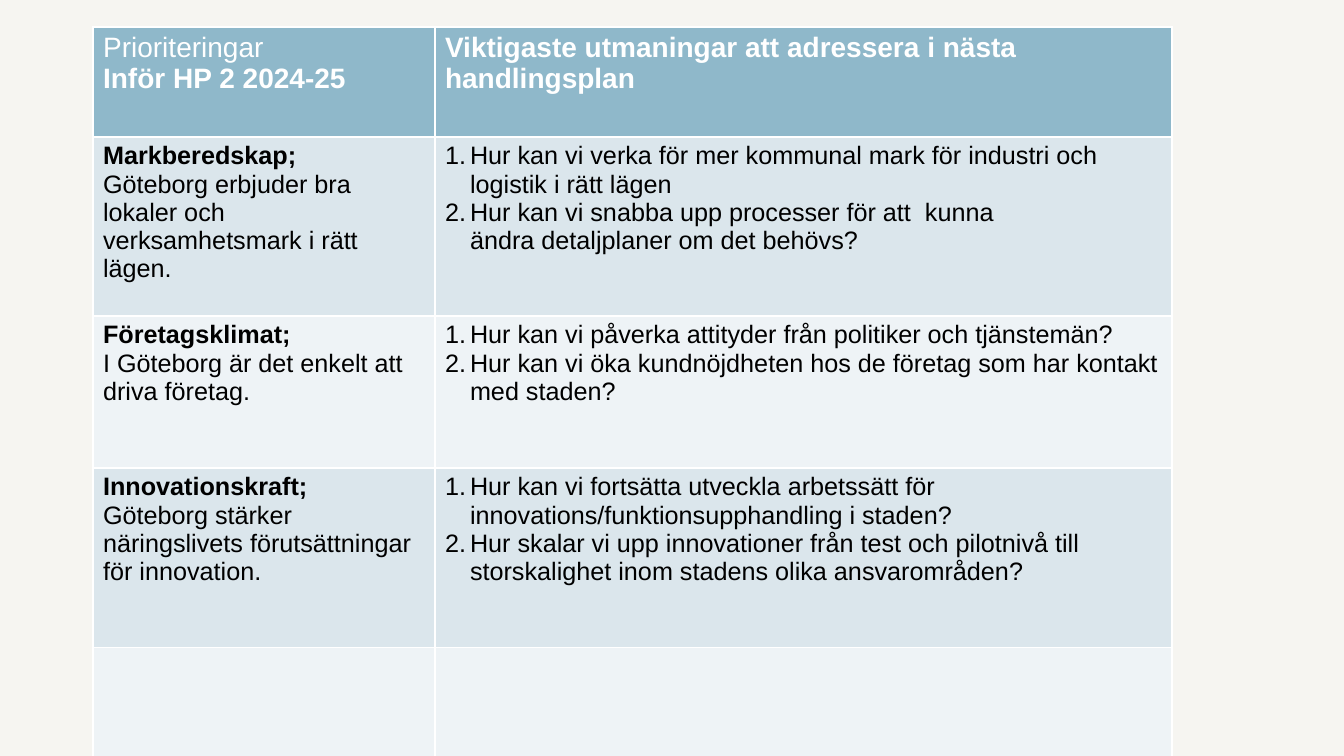
from lxml import etree
from pptx import Presentation
from pptx.dml.color import RGBColor
from pptx.oxml.ns import qn
from pptx.util import Emu, Pt

PX = 9071  # EMU per px at 100.8 px to the inch
BLANK_LAYOUT = 6
NBSP = chr(160)

FONT = "Arial"
BACKGROUND = "F6F5F1"
WHITE = "FFFFFF"
BLACK = "000000"
HEADER_FILL = "8FB8CA"
BAND_FILLS = ("DBE6EC", "EEF3F6")

TABLE_LEFT, TABLE_TOP = 93, 27
COLUMN_WIDTHS = (342, 737)
ROW_HEIGHTS = (110, 179, 152, 180, 207)
NUMBER_INDENT = 25

HEADER_LEFT = ("Prioriteringar", f"Inför HP 2 2024-25{NBSP}")
HEADER_RIGHT = f"Viktigaste utmaningar att adressera{NBSP}i nästa handlingsplan"

# Priority, its goal, and the challenges to address
PRIORITIES = (
    ("Markberedskap;",
     f"Göteborg erbjuder bra lokaler och verksamhetsmark i{NBSP}rätt lägen.",
     ("Hur kan vi verka för mer kommunal mark för industri och logistik i rätt lägen",
      f"Hur kan vi snabba upp processer för att{NBSP} kunna ändra{NBSP}detaljplaner "
      "om det behövs?")),
    ("Företagsklimat;",
     "I Göteborg är det enkelt att driva företag.",
     ("Hur kan vi påverka attityder från politiker och tjänstemän?",
      "Hur kan vi öka kundnöjdheten hos de företag som har kontakt med staden?")),
    ("Innovationskraft;",
     f"Göteborg stärker näringslivets förutsättningar för{NBSP}innovation.",
     ("Hur kan vi fortsätta utveckla arbetssätt för innovations/funktionsupphandling "
      "i staden?",
      "Hur skalar vi upp innovationer från test och pilotnivå till storskalighet inom "
      "stadens olika ansvarområden?")),
)


def px(length):
    return Emu(length * PX)


def color(hex_string):
    return RGBColor.from_string(hex_string)


def add_text(paragraph, text, size=18, bold=False, font_color=BLACK):
    run = paragraph.add_run()
    run.text = text
    run.font.name = FONT
    run.font.size = Pt(size)
    run.font.bold = bold
    run.font.color.rgb = color(font_color)


def number_paragraph(paragraph):
    properties = paragraph._p.get_or_add_pPr()
    properties.set("marL", str(px(NUMBER_INDENT)))
    properties.set("indent", str(-px(NUMBER_INDENT)))
    etree.SubElement(properties, qn("a:buAutoNum"), type="arabicPeriod")


def style_cell(cell, fill):
    """Give the cell thin white borders and a solid fill."""
    properties = cell._tc.get_or_add_tcPr()
    for side in ("L", "R", "T", "B"):
        line = etree.SubElement(properties, qn(f"a:ln{side}"), w=str(Pt(1)))
        solid = etree.SubElement(line, qn("a:solidFill"))
        etree.SubElement(solid, qn("a:srgbClr"), val=WHITE)
    cell.fill.solid()
    cell.fill.fore_color.rgb = color(fill)


def add_priority_table(slide):
    frame = slide.shapes.add_table(
        len(ROW_HEIGHTS), len(COLUMN_WIDTHS), px(TABLE_LEFT), px(TABLE_TOP),
        px(sum(COLUMN_WIDTHS)), px(sum(ROW_HEIGHTS)))
    table = frame.table
    for column, width in zip(table.columns, COLUMN_WIDTHS):
        column.width = px(width)
    for index, (row, height) in enumerate(zip(table.rows, ROW_HEIGHTS)):
        row.height = px(height)
        fill = HEADER_FILL if index == 0 else BAND_FILLS[(index - 1) % 2]
        for cell in row.cells:
            style_cell(cell, fill)
    return table


def fill_header(table):
    heading, period = HEADER_LEFT
    paragraph = table.cell(0, 0).text_frame.paragraphs[0]
    add_text(paragraph, heading, size=20, font_color=WHITE)
    paragraph.add_line_break()
    add_text(paragraph, period, size=20, bold=True, font_color=WHITE)
    paragraph = table.cell(0, 1).text_frame.paragraphs[0]
    add_text(paragraph, HEADER_RIGHT, size=20, bold=True, font_color=WHITE)


def fill_priority(table, row, name, goal, challenges):
    text_frame = table.cell(row, 0).text_frame
    add_text(text_frame.paragraphs[0], name, bold=True)
    add_text(text_frame.add_paragraph(), goal)

    text_frame = table.cell(row, 1).text_frame
    for index, challenge in enumerate(challenges):
        paragraph = text_frame.add_paragraph() if index else text_frame.paragraphs[0]
        number_paragraph(paragraph)
        add_text(paragraph, challenge)


def main():
    presentation = Presentation()
    presentation.slide_width = px(1344)
    presentation.slide_height = px(756)
    slide = presentation.slides.add_slide(presentation.slide_layouts[BLANK_LAYOUT])
    slide.background.fill.solid()
    slide.background.fill.fore_color.rgb = color(BACKGROUND)

    table = add_priority_table(slide)
    fill_header(table)
    for row, (name, goal, challenges) in enumerate(PRIORITIES, start=1):
        fill_priority(table, row, name, goal, challenges)

    presentation.save("out.pptx")


if __name__ == "__main__":
    main()
